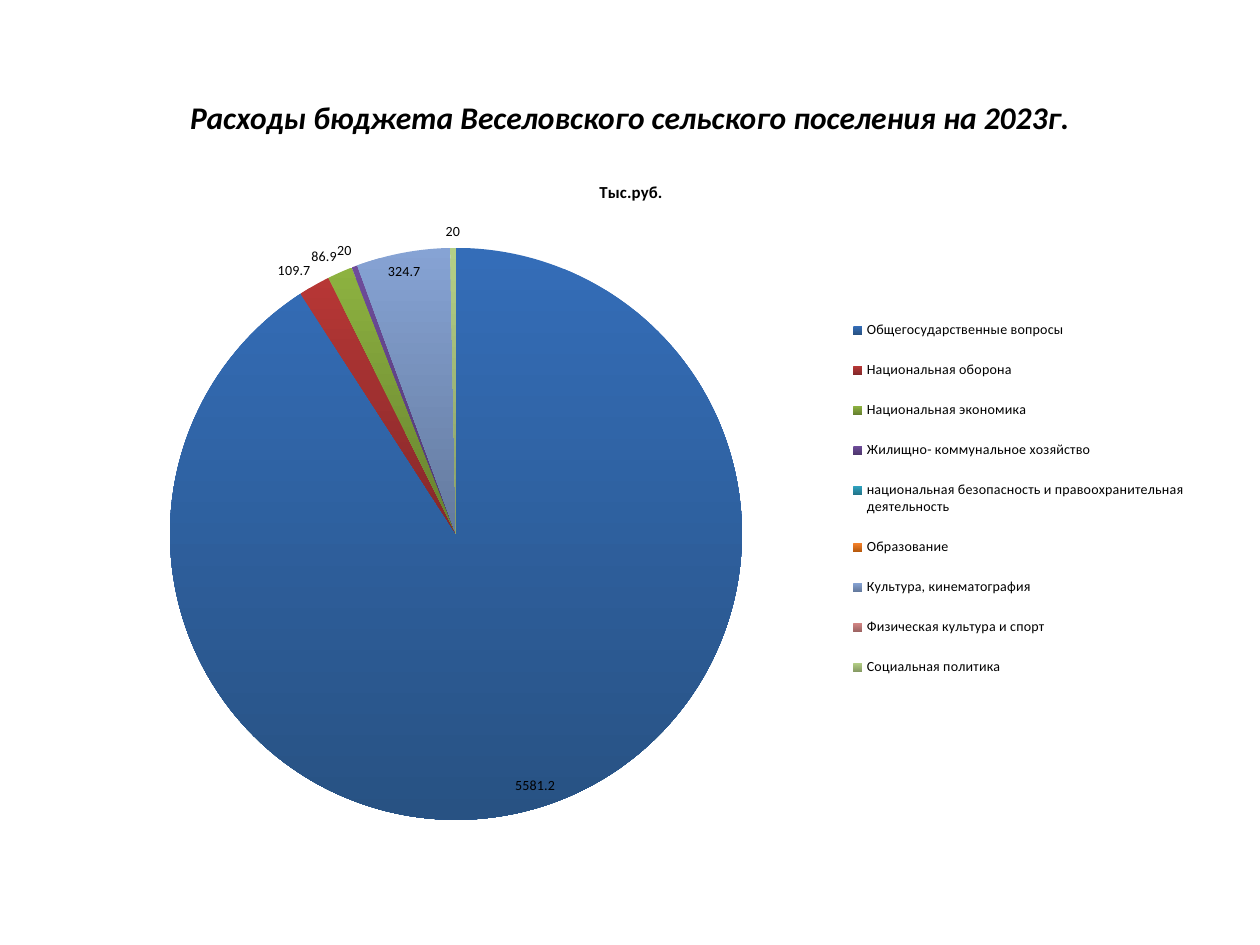
from lxml import etree
from pptx import Presentation
from pptx import util as u
from pptx.chart import data as cd
from pptx.dml.color import RGBColor
from pptx.enum import chart as ch, text
from pptx.oxml.ns import qn

SCALE = 914400 / 126
FONT = "Calibri"
COSTS = [
    ("Общегосударственные вопросы", 5581.2, "346DB8", "285283"),
    ("Национальная оборона", 109.7, "B73735", "84282A"),
    ("Национальная экономика", 86.9, "8DB240", "66802F"),
    ("Жилищно- коммунальное хозяйство", 20, "6E4C9A", "4F376E"),
    ("национальная безопасность и правоохранительная деятельность",
     0, "2FA3C0", "22758A"),
    ("Образование", 0, "F5812A", "B85A0E"),
    ("Культура, кинематография", 324.7, "86A3D4", "647A9E"),
    ("Физическая культура и спорт", 0, "D48685", "9E6463"),
    ("Социальная политика", 20, "B4CF86", "879B64"),
]


def px(num):
    """Turn pixels into EMU."""
    return u.Emu(round(num * SCALE))


def tint(color, code):
    """Set a colour from a hex string."""
    color.rgb = RGBColor.from_string(code)


def style(font, size, bold=False, slant=False):
    """Set face, size, weight and slant in black."""
    font.name, font.size = FONT, u.Pt(size)
    font.bold, font.italic = bold, slant
    tint(font.color, "000000")


def add(node, tag, val=None):
    """Append a chart element with an optional value."""
    part = etree.SubElement(node, qn("c:" + tag))
    if val is not None:
        part.set("val", str(val))
    return part


def place(node, spot, box, size, inner=False):
    """Lay a chart part out in a pixel box within the chart size."""
    for old in node.findall(qn("c:layout")):
        node.remove(old)
    root = etree.Element(qn("c:layout"))
    man = add(root, "manualLayout")
    if inner:
        add(man, "layoutTarget", "inner")
    for tag in ("xMode", "yMode"):
        add(man, tag, "edge")
    for tag, num, full in zip("xywh", box, size * 2):
        add(man, tag, num / full)
    node.insert(spot, root)


def label(row):
    """Show the values of a series, leaving out the zeros."""
    tags = row.data_labels
    tags.show_value, tags.show_percentage = True, False
    tags.position = ch.XL_LABEL_POSITION.BEST_FIT
    tags.number_format, tags.number_format_is_linked = "General", False
    style(tags.font, 8)
    empty = [num for num, val in enumerate(row.values) if not val]
    for spot, num in enumerate(empty):
        tag = etree.Element(qn("c:dLbl"))
        add(tag, "idx", num)
        add(tag, "delete", 1)
        tags._element.insert(spot, tag)


def head(slide, x, y, w, h):
    """Write the slide heading."""
    frame = slide.shapes.add_textbox(px(x), px(y), px(w), px(h)).text_frame
    frame.word_wrap = True
    frame.vertical_anchor = text.MSO_ANCHOR.MIDDLE
    frame.text = "Расходы бюджета Веселовского сельского поселения на 2023г."
    line = frame.paragraphs[0]
    line.alignment = text.PP_ALIGN.CENTER
    style(line.runs[0].font, 18, True, True)


def pie(slide, x, y, w, h):
    """Draw the pie of costs with its title, labels and legend."""
    data = cd.CategoryChartData()
    data.categories = [row[0] for row in COSTS]
    data.add_series("Тыс.руб.", [row[1] for row in COSTS])
    chart = slide.shapes.add_chart(
        ch.XL_CHART_TYPE.PIE, px(x), px(y), px(w), px(h), data).chart
    style(chart.font, 8)
    chart.has_title = True
    frame = chart.chart_title.text_frame
    frame.text = "Тыс.руб."
    style(frame.paragraphs[0].runs[0].font, 9.6, True)

    plot = chart.plots[0]
    plot.vary_by_categories = True
    row = plot.series[0]
    for num, (_, _, top, low) in enumerate(COSTS):
        fill = row.points[num].format.fill
        fill.gradient()
        fill.gradient_angle = 270
        for stop, code in zip(fill.gradient_stops, (top, low)):
            tint(stop.color, code)
    label(row)

    chart.has_legend = True
    key = chart.legend
    key.position = ch.XL_LEGEND_POSITION.RIGHT
    key.include_in_layout = False
    style(key.font, 8)
    place(key._element, 1, (785, 142, 340, 400), (w, h))
    area = chart._chartSpace.find(".//" + qn("c:plotArea"))
    place(area, 0, (106, 91, 572, 572), (w, h), True)


def main():
    """Build and save the slide."""
    deck = Presentation()
    deck.slide_width, deck.slide_height = px(1260), px(945)
    slide = deck.slides.add_slide(deck.slide_layouts[6])
    head(slide, 63, 38, 1134, 158)
    pie(slide, 64, 157, 1134, 680)
    deck.save("out.pptx")


if __name__ == "__main__":
    main()
